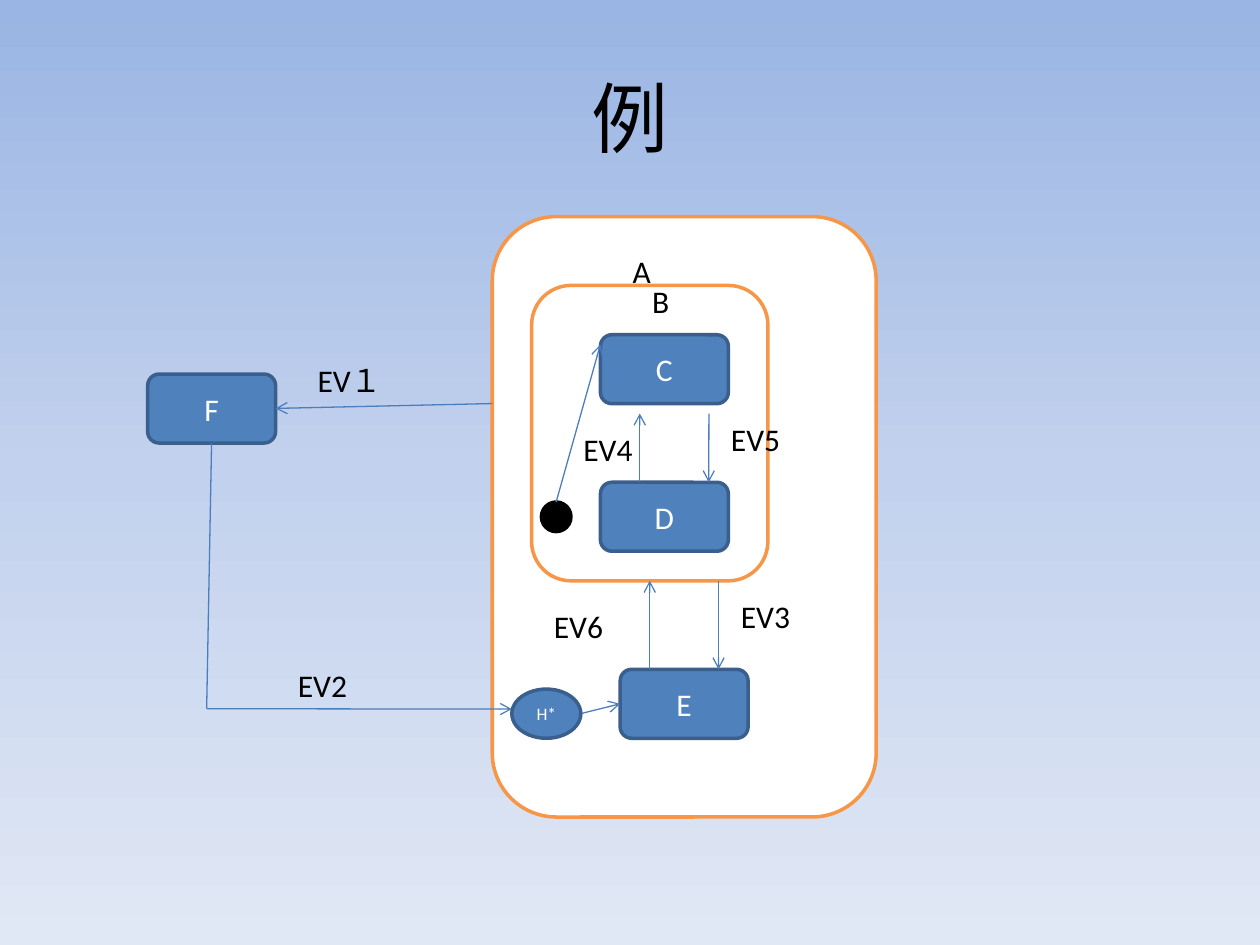
from copy import deepcopy
from lxml import etree
from pptx import Presentation
from pptx.dml.color import RGBColor
from pptx.enum import shapes, text
from pptx.oxml.ns import qn
from pptx.util import Pt

BLACK = RGBColor(0x00, 0x00, 0x00)
WHITE = RGBColor(0xFF, 0xFF, 0xFF)
BLUE = RGBColor(0x4F, 0x81, 0xBD)
NAVY = RGBColor(0x3A, 0x5F, 0x8C)
ORANGE = RGBColor(0xF7, 0x96, 0x46)
ARROW = RGBColor(0x4B, 0x7E, 0xBC)
SKY = [
    (0, RGBColor(0x9A, 0xB5, 0xE4)),
    (0.5, RGBColor(0xC2, 0xD1, 0xED)),
    (1, RGBColor(0xE1, 0xE8, 0xF5)),
]
ROUND = shapes.MSO_SHAPE.ROUNDED_RECTANGLE
OVAL = shapes.MSO_SHAPE.OVAL

TITLE = ("例", 36, 21.5, 648, 90)
FRAMES = [(281.3, 123.8, 219.4, 343.1), (303.8, 163.1, 135, 168.8)]
STATES = [("C", 343.1, 191.3), ("D", 343.1, 275.6), ("E", 354.4, 382.5), ("F", 84.4, 213.8)]
STATE_W, STATE_H = 73.1, 39.4
START = (309.4, 286.9, 16.9, 16.9)
HISTORY = (292.5, 393.8, 39.4, 28.1)
ARROWS = [
    (405.1, 236.3, 405, 275.6),
    (365.6, 275.6, 365.6, 236.3),
    (317.8, 286.9, 343.1, 196.9),
    (410.6, 331.9, 410.6, 382.5),
    (371.3, 382.5, 371.3, 331.9),
    (118.1, 405, 292.5, 405.2),
    (281.3, 230.6, 157.5, 233.4),
    (331.9, 407.8, 354.4, 402.2),
]
STEM = (120.9, 253.2, 118.1, 405)
NAMES = [("A", 354.4, 140.6), ("B", 365.6, 157.5)]
EVENTS = [
    ("EV5", 410.6, 236.3),
    ("EV4", 326.3, 241.9),
    ("EV3", 416.3, 337.5),
    ("EV6", 309.4, 343.1),
    ("EV2", 163.1, 376.9),
    ("EV１", 174.4, 202.5),
]
NAME_W, EVENT_W, LABEL_H = 39.4, 56.3, 29.1


def write(shape, words, size, color, align, anchor):
    frame = shape.text_frame
    frame.word_wrap = True
    frame.vertical_anchor = anchor
    par = frame.paragraphs[0]
    par.text = words
    par.alignment = align
    par.font.size = Pt(size)
    par.font.name = "Calibri"
    par.font.color.rgb = color


def draw(kind, rect, fill, edge, words="", size=18):
    shape = slide.shapes.add_shape(kind, *map(Pt, rect))
    shape.shadow.inherit = False
    shape.fill.solid()
    shape.fill.fore_color.rgb = fill
    shape.line.color.rgb = edge
    shape.line.width = Pt(2)
    if words:
        write(shape, words, size, WHITE, text.PP_ALIGN.CENTER, text.MSO_ANCHOR.MIDDLE)


def label(words, rect, size=18, align=text.PP_ALIGN.LEFT, anchor=text.MSO_ANCHOR.TOP):
    box = slide.shapes.add_textbox(*map(Pt, rect))
    write(box, words, size, BLACK, align, anchor)


def link(ends, head=True):
    line = slide.shapes.add_connector(shapes.MSO_CONNECTOR.STRAIGHT, *map(Pt, ends))
    line.line.color.rgb = ARROW
    line.line.width = Pt(0.75)
    if head:
        etree.SubElement(line.line._get_or_add_ln(), qn("a:tailEnd"), type="arrow")
    etree.SubElement(line.element.spPr, qn("a:effectLst"))


deck = Presentation()
deck.slide_width, deck.slide_height = Pt(720), Pt(540)
slide = deck.slides.add_slide(deck.slide_layouts[6])

fill = slide.background.fill
fill.gradient()
fill.gradient_angle = 270
stops = slide.element.find(".//" + qn("a:gsLst"))
stops.append(deepcopy(stops[-1]))
for stop, (place, color) in zip(fill.gradient_stops, SKY):
    stop.position = place
    stop.color.rgb = color

label(TITLE[0], TITLE[1:], 44, text.PP_ALIGN.CENTER, text.MSO_ANCHOR.MIDDLE)
for rect in FRAMES:
    draw(ROUND, rect, WHITE, ORANGE)
for name, x, y in STATES:
    draw(ROUND, (x, y, STATE_W, STATE_H), BLUE, NAVY, name)
draw(OVAL, START, BLACK, BLACK)
for ends in ARROWS:
    link(ends)
link(STEM, head=False)
draw(OVAL, HISTORY, BLUE, NAVY, "H*", 10)
for group, width in ((NAMES, NAME_W), (EVENTS, EVENT_W)):
    for words, x, y in group:
        label(words, (x, y, width, LABEL_H))

deck.save("out.pptx")
